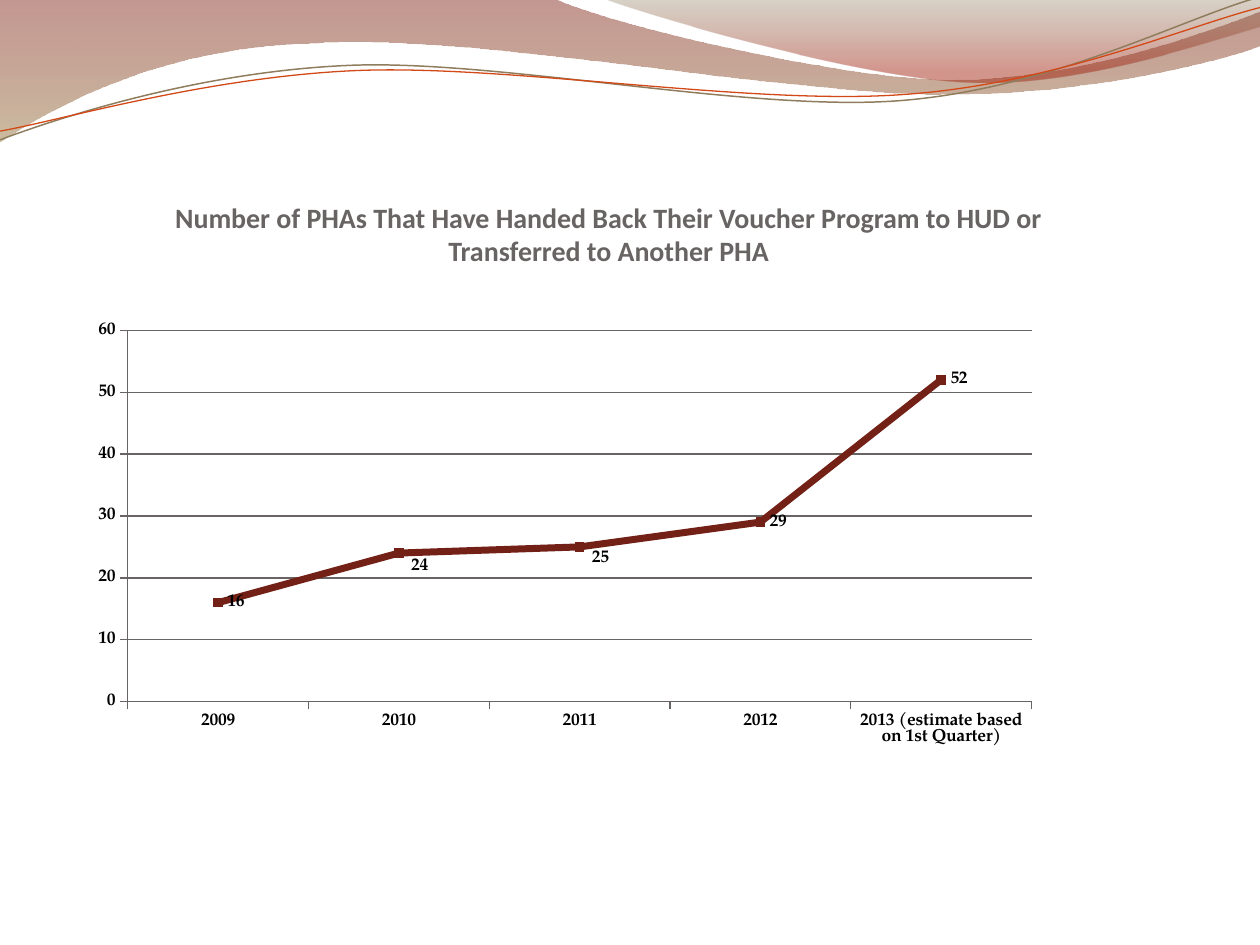
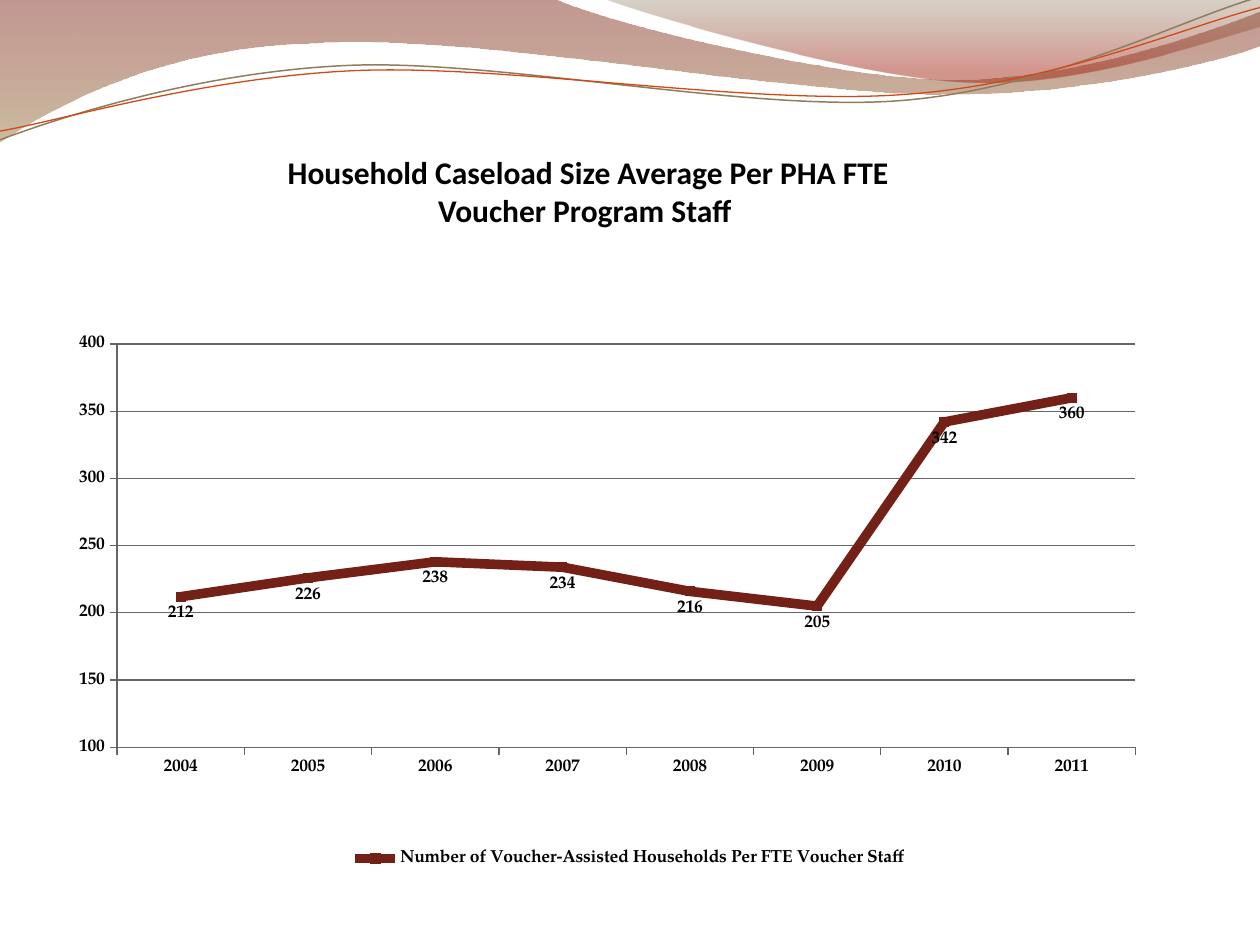
from dataclasses import dataclass

import pptx
import pptx.chart.data
import pptx.dml.color
import pptx.enum.chart
import pptx.enum.text
import pptx.oxml
import pptx.oxml.ns
import pptx.util

Pt = pptx.util.Pt
Anchor = pptx.enum.text.MSO_ANCHOR
LabelPosition = pptx.enum.chart.XL_LABEL_POSITION


@dataclass(frozen=True)
class Theme:
    title_font: str = "Calibri"
    chart_font: str = "TeX Gyre Pagella"
    chart_size: float = 10
    first_title_size: float = 16
    second_title_size: float = 18
    black: str = "000000"
    grey: str = "696464"
    series: str = "732117"
    olive_line: str = "8F7D5E"
    orange_line: str = "D34817"
    # Gradient stops: position, colour, opacity in percent
    wide_wave: tuple = ((0, "7C1A0E", 45), (1, "A18552", 55))
    right_wave: tuple = ((0, "7E6B48", 30), (0.8, "9F1705", 45))


THEME = Theme()

# Outlines in points: a start, then line ends (one point) or Bezier curves (three)
WIDE_WAVE = [
    (0, 0), [(316.8, -0.7)],
    [(342.7, 12.2), (478.1, 45.4), (545.8, 45.4)],
    [(614.2, 45.4), (689.8, 18.7), (720, 6.5)],
    [(720.7, 25.9)],
    [(707.8, 31.7), (626.4, 54.7), (537.1, 54)],
    [(447.8, 54), (275, 20.2), (185, 24.5)],
    [(92.9, 25.9), (33.1, 59.8), (-0.7, 81.4)],
]
RIGHT_WAVE = [
    (344.9, -0.7), [(366.5, 7.9), (491, 44.6), (553.7, 46.8)],
    [(616.3, 49.7), (691.9, 23), (720, 15.1)], [(720, 0)],
]
OLIVE_CURVE = [
    (0, 79.9), [(34.6, 67), (113.8, 41), (199.4, 37.4)],
    [(284.4, 33.8), (427, 64.1), (513.4, 57.6)],
    [(599.8, 51.1), (675.4, 10.8), (718.6, -1.4)],
]
ORANGE_CURVE = [
    (0, 74.9), [(33.8, 69.1), (118.1, 43.9), (203.8, 40.3)],
    [(290.2, 36.7), (429.8, 60.5), (516.2, 54)],
    [(601.9, 48.2), (677.5, 15.1), (720, 4.3)],
]


def rgb(colour):
    return pptx.dml.color.RGBColor.from_string(colour)


def style_font(font, name, size, colour):
    font.name, font.size, font.bold = name, Pt(size), True
    font.color.rgb = rgb(colour)


def style_line(line, colour, width):
    line.color.rgb = rgb(colour)
    line.width = Pt(width)


# Header waves
def add_outline(slide, outline, closed):
    """Build a freeform, then join each group of three points into a curve."""
    start, *segments = outline
    builder = slide.shapes.build_freeform(*map(Pt, start))
    points = [(Pt(x), Pt(y)) for segment in segments for x, y in segment]
    builder.add_line_segments(points, close=closed)
    shape = builder.convert_to_shape()
    shape.shadow.inherit = False

    lines = iter(shape.element.xpath(".//a:path/a:lnTo"))
    for segment in segments:
        group = [next(lines) for _ in segment]
        if len(group) == 3:
            curve = pptx.oxml.parse_xml(
                f'<a:cubicBezTo {pptx.oxml.ns.nsdecls("a")}/>')
            group[0].addprevious(curve)
            for line in group:
                curve.append(line[0])
                line.getparent().remove(line)
    return shape


def add_wave(slide, outline, stops):
    shape = add_outline(slide, outline, closed=True)
    shape.line.fill.background()
    shape.fill.gradient()
    shape.fill.gradient_angle = 270
    for stop, (position, colour, _) in zip(shape.fill.gradient_stops, stops):
        stop.position = position
        stop.color.rgb = rgb(colour)
    colours = shape.element.xpath(".//a:gs/a:srgbClr")
    for element, (_, _, opacity) in zip(colours, stops):
        alpha = pptx.oxml.parse_xml(
            f'<a:alpha {pptx.oxml.ns.nsdecls("a")} val="{opacity * 1000}"/>')
        element.append(alpha)
    return shape


def add_curve(slide, outline, colour, width):
    shape = add_outline(slide, outline, closed=False)
    shape.fill.background()
    style_line(shape.line, colour, width)
    return shape


def add_header_to_layout(slide):
    """Draw the header once and place it on the layout that the slides share."""
    header = [
        add_wave(slide, WIDE_WAVE, THEME.wide_wave),
        add_wave(slide, RIGHT_WAVE, THEME.right_wave),
        add_curve(slide, OLIVE_CURVE, THEME.olive_line, 0.85),
        add_curve(slide, ORANGE_CURVE, THEME.orange_line, 0.75),
    ]
    for shape in header:
        slide.slide_layout.shapes.element.append(shape.element)


# Titles
def set_title(slide, text, box, size, colour, anchor, margins):
    title = slide.shapes.title
    title.left, title.top, title.width, title.height = map(Pt, box)
    frame = title.text_frame
    frame.word_wrap = True
    frame.auto_size = pptx.enum.text.MSO_AUTO_SIZE.NONE
    frame.vertical_anchor = anchor
    (frame.margin_left, frame.margin_top,
     frame.margin_right, frame.margin_bottom) = map(Pt, margins)
    paragraph = frame.paragraphs[0]
    paragraph.alignment = pptx.enum.text.PP_ALIGN.CENTER
    run = paragraph.add_run()
    run.text = text
    style_font(run.font, THEME.title_font, size, colour)


# Charts
def style_axis(axis):
    axis.major_tick_mark = pptx.enum.chart.XL_TICK_MARK.OUTSIDE
    axis.minor_tick_mark = pptx.enum.chart.XL_TICK_MARK.NONE
    style_line(axis.format.line, THEME.grey, 0.75)


def layout_xml(x, y, size=None):
    """Manual layout: an inner plot area with a size, or a label offset without."""
    values = [("x", x), ("y", y)]
    modes = ""
    if size:
        modes = ('<c:layoutTarget val="inner"/>'
                 '<c:xMode val="edge"/><c:yMode val="edge"/>')
        values += zip("wh", size)
    numbers = "".join(f'<c:{name} val="{value}"/>' for name, value in values)
    return pptx.oxml.parse_xml(
        f'<c:layout {pptx.oxml.ns.nsdecls("c")}>'
        f"<c:manualLayout>{modes}{numbers}</c:manualLayout></c:layout>")


def set_plot_area(chart, x, y, width, height):
    plot_area = chart.element.xpath(".//c:plotArea")[0]
    for old_layout in plot_area.xpath("c:layout"):
        plot_area.remove(old_layout)
    plot_area.insert(0, layout_xml(x, y, (width, height)))


def shift_label(chart, index, x, y):
    """Move one data label by fractions of the chart size."""
    label = chart.plots[0].series[0].points[index].data_label
    label.position = LabelPosition.RIGHT
    index_element = chart.element.xpath(f'.//c:dLbl/c:idx[@val="{index}"]')[0]
    index_element.addnext(layout_xml(x, y))


def add_line_chart(slide, box, name, categories, values, scale, plot_area,
                   line_width, label_position):
    data = pptx.chart.data.CategoryChartData()
    data.categories = categories
    data.add_series(name, values)
    chart = slide.shapes.add_chart(
        pptx.enum.chart.XL_CHART_TYPE.LINE_MARKERS, *map(Pt, box), data).chart
    chart.has_title = False
    chart.has_legend = False
    style_font(chart.font, THEME.chart_font, THEME.chart_size, THEME.black)
    set_plot_area(chart, *plot_area)

    # Axes
    style_axis(chart.category_axis)
    value_axis = chart.value_axis
    style_axis(value_axis)
    value_axis.minimum_scale, value_axis.maximum_scale, value_axis.major_unit = scale
    value_axis.has_major_gridlines = True
    style_line(value_axis.major_gridlines.format.line, THEME.grey, 0.75)

    # Series and labels
    plot = chart.plots[0]
    plot.vary_by_categories = False
    series = plot.series[0]
    series.smooth = False
    style_line(series.format.line, THEME.series, line_width)
    marker = series.marker
    marker.style = pptx.enum.chart.XL_MARKER_STYLE.SQUARE
    marker.size = 5
    marker.format.fill.solid()
    marker.format.fill.fore_color.rgb = rgb(THEME.series)
    style_line(marker.format.line, THEME.series, 0.75)
    series.data_labels.show_value = True
    series.data_labels.position = label_position
    return chart


def add_bottom_legend(chart):
    chart.has_legend = True
    chart.legend.position = pptx.enum.chart.XL_LEGEND_POSITION.BOTTOM
    chart.legend.include_in_layout = False
    style_font(chart.legend.font, THEME.chart_font, THEME.chart_size, THEME.black)


# Slides
def build_handed_back_slide(slide):
    set_title(
        slide,
        "Number of PHAs That Have Handed Back Their Voucher Program to HUD or "
        "Transferred to Another PHA",
        (74.6, 112.6, 546.5, 40.3), THEME.first_title_size, THEME.grey,
        Anchor.BOTTOM, (0, 3.6, 0, 0))
    chart = add_line_chart(
        slide, (46.3, 130.6, 556.6, 319.7), "Series 1",
        ["2009", "2010", "2011", "2012", "2013 (estimate based on 1st Quarter)"],
        [16, 24, 25, 29, 52], scale=(0, 60, 10),
        plot_area=(0.048, 0.182, 0.928, 0.664), line_width=4,
        label_position=LabelPosition.RIGHT)
    shift_label(chart, 1, 0.003, 0.024)
    shift_label(chart, 2, 0.003, 0.02)


def build_caseload_slide(slide):
    chart = add_line_chart(
        slide, (35.8, 152.4, 648, 345.6),
        "Number of Voucher-Assisted Households Per FTE Voucher Staff",
        [str(year) for year in range(2004, 2012)],
        [212, 226, 238, 234, 216, 205, 342, 360], scale=(100, 400, 50),
        plot_area=(0.048, 0.128, 0.898, 0.667), line_width=5.5,
        label_position=LabelPosition.BELOW)
    add_bottom_legend(chart)
    set_title(
        slide, "Household Caseload Size Average Per PHA FTE Voucher Program Staff ",
        (156.2, 84, 360, 51), THEME.second_title_size, THEME.black,
        Anchor.TOP, (7.2, 3.6, 7.2, 3.6))


def main():
    presentation = pptx.Presentation()
    presentation.slide_width, presentation.slide_height = Pt(720), Pt(540)
    title_only = presentation.slide_layouts[5]
    first_slide = presentation.slides.add_slide(title_only)
    add_header_to_layout(first_slide)
    build_handed_back_slide(first_slide)
    build_caseload_slide(presentation.slides.add_slide(title_only))
    presentation.save("out.pptx")


if __name__ == "__main__":
    main()
